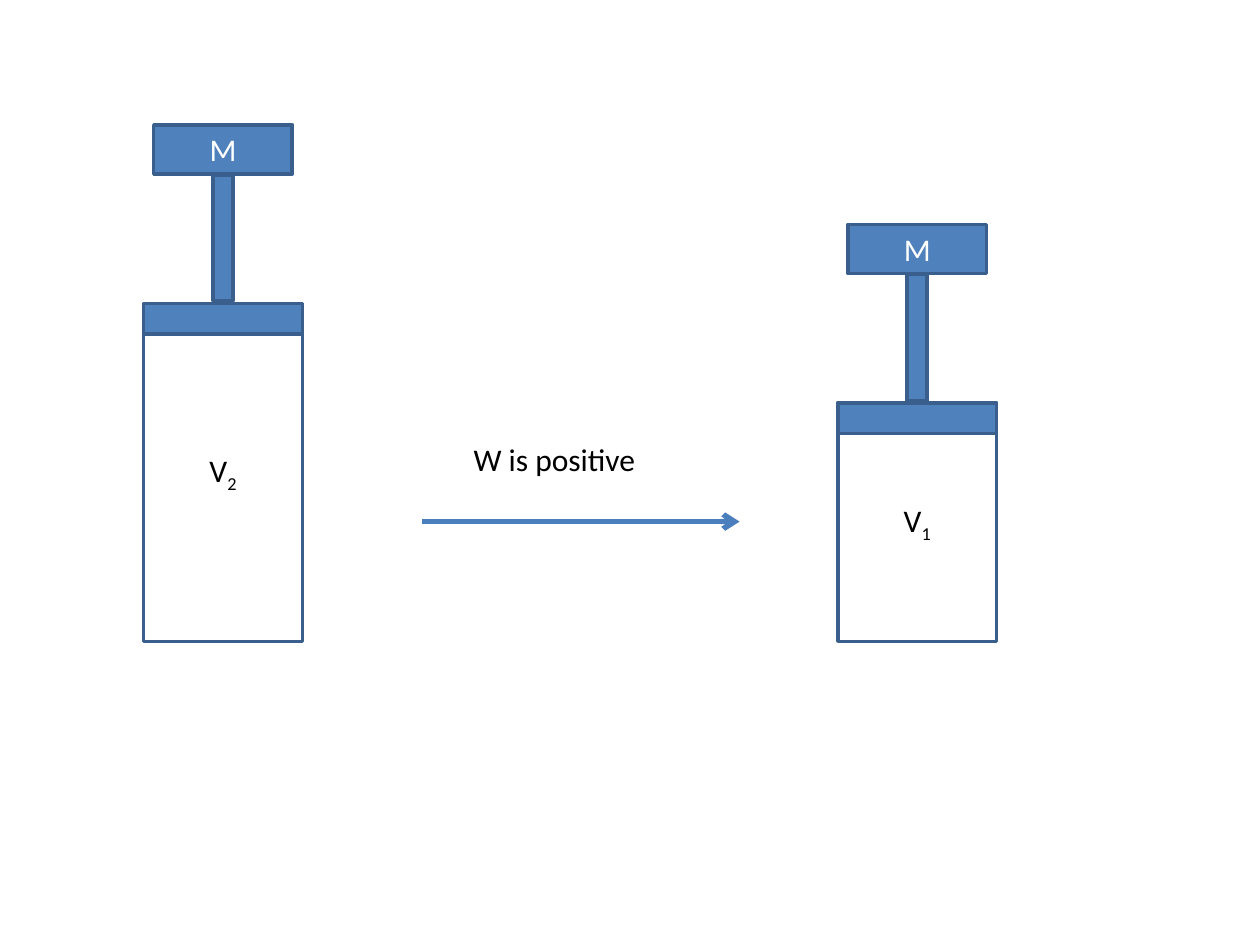
from pptx import Presentation
from pptx.dml.color import RGBColor as RGB
from pptx.enum.shapes import MSO_CONNECTOR as LINE, MSO_SHAPE as SHAPE
from pptx.enum.text import MSO_ANCHOR as ANCHOR, PP_ALIGN as ALIGN
from pptx.oxml.ns import qn
from pptx.util import Inches, Pt
from lxml.etree import SubElement

COLORS = {"fill": "4F81BD", "edge": "3A5F8C", "arrow": "4B7EBC",
          "dark": "000000", "light": "FFFFFF"}
WIDTH = 1.26   # cylinder width
BASE = 5.09    # common bottom of both cylinders


def color(name):
    return RGB.from_string(COLORS[name])


def write(shape, text, sub="", ink="dark", align=ALIGN.CENTER,
          anchor=ANCHOR.MIDDLE):
    """Put text in a shape, with an optional subscript after it."""
    frame = shape.text_frame
    frame.word_wrap = True
    frame.vertical_anchor = anchor
    para = frame.paragraphs[0]
    para.alignment = align
    for part in filter(None, (text, sub)):
        run = para.add_run()
        run.text = part
        run.font.name = "Calibri"
        run.font.size = Pt(18)
        run.font.color.rgb = color(ink)
    if sub:
        run.font._element.set("baseline", "-25000")


def add_box(slide, left, top, width, height, fill="fill"):
    box = slide.shapes.add_shape(SHAPE.RECTANGLE, Inches(left), Inches(top),
                                 Inches(width), Inches(height))
    box.shadow.inherit = False
    if fill:
        box.fill.solid()
        box.fill.fore_color.rgb = color(fill)
    else:
        box.fill.background()
    box.line.color.rgb = color("edge")
    box.line.width = Pt(2)
    return box


def add_piston(slide, left, top, sub):
    """Draw a gas cylinder with its piston, rod and mass, all centred."""
    mid = left + WIDTH / 2
    gas = add_box(slide, left, top, WIDTH, BASE - top, fill=None)
    write(gas, "V", sub=sub)
    add_box(slide, left, top, WIDTH, 0.24)
    add_box(slide, mid - 0.08, top - 1.02, 0.16, 1)
    mass = add_box(slide, mid - 0.55, top - 1.42, 1.1, 0.39)
    write(mass, "M", ink="light")


def add_arrow(slide, left, right, y):
    arrow = slide.shapes.add_connector(LINE.STRAIGHT, Inches(left), Inches(y),
                                       Inches(right), Inches(y))
    arrow.line.color.rgb = color("arrow")
    arrow.line.width = Pt(3)
    SubElement(arrow.line._get_or_add_ln(), qn("a:tailEnd"), type="arrow")
    SubElement(arrow._element.spPr, qn("a:effectLst"))


def main():
    deck = Presentation()
    deck.slide_width, deck.slide_height = Inches(10), Inches(7.5)
    slide = deck.slides.add_slide(deck.slide_layouts[6])

    add_piston(slide, 6.65, 3.2, "1")
    add_piston(slide, 1.14, 2.41, "2")
    add_arrow(slide, 3.35, 5.87, 4.14)
    label = slide.shapes.add_textbox(Inches(3.66), Inches(3.44),
                                     Inches(1.89), Inches(0.4))
    write(label, "W is positive", align=ALIGN.LEFT, anchor=ANCHOR.TOP)

    deck.save("out.pptx")


if __name__ == "__main__":
    main()
